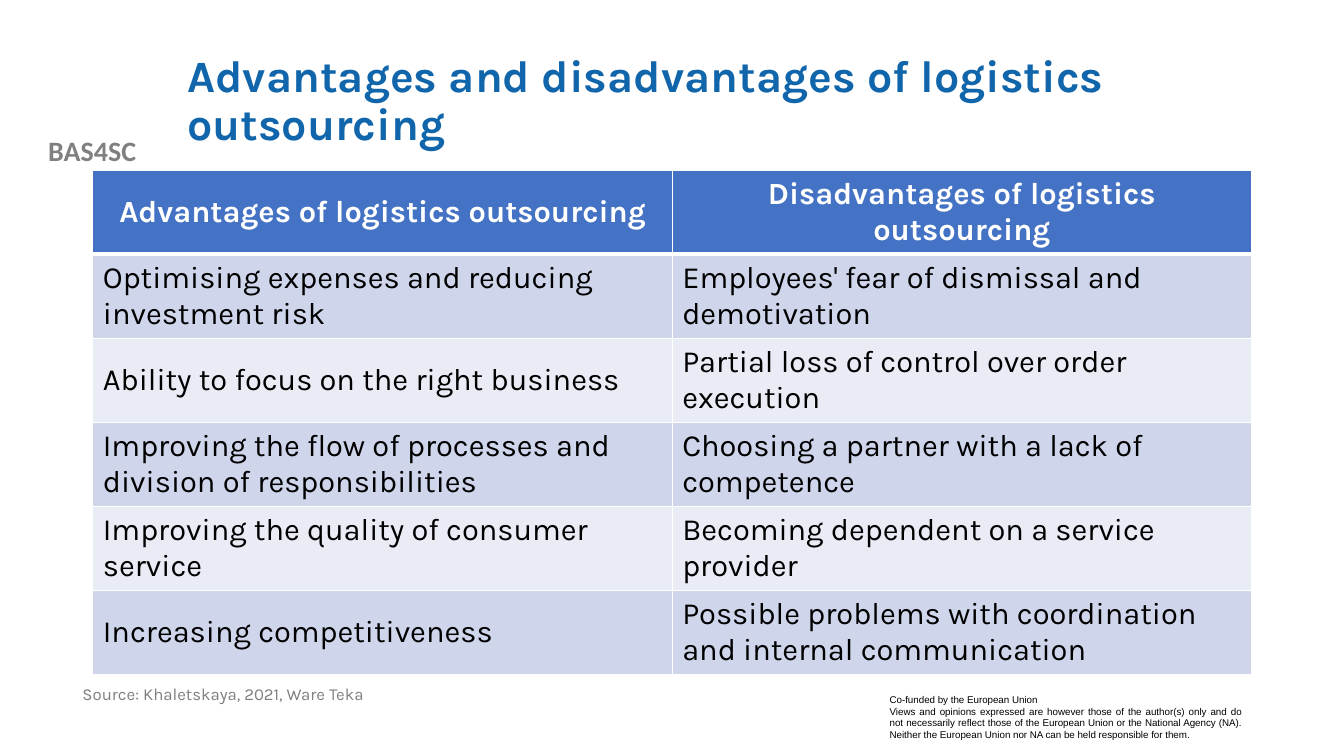
from dataclasses import dataclass

from lxml import etree
from pptx import Presentation
from pptx.dml.color import RGBColor
from pptx.enum import shapes, text
from pptx.oxml import ns
from pptx.util import Cm, Pt

TITLE = "Advantages and disadvantages of logistics outsourcing"
PROGRAMME = "BAS4SC"
SOURCE = "Source: Khaletskaya, 2021, Ware Teka"
FUNDING = (
    "Co-funded by the European Union",
    "Views and opinions expressed are however those of the author(s) only and do not "
    "necessarily reflect those of the European Union or the National Agency (NA). "
    "Neither the European Union nor NA can be held responsible for them.",
)
COMPARISON = (
    ("Advantages of logistics outsourcing", "Disadvantages of logistics outsourcing"),
    ("Optimising expenses and reducing investment risk",
     "Employees' fear of dismissal and demotivation"),
    ("Ability to focus on the right business",
     "Partial loss of control over order execution"),
    ("Improving the flow of processes and division of responsibilities",
     "Choosing a partner with a lack of competence"),
    ("Improving the quality of consumer service",
     "Becoming dependent on a service provider"),
    ("Increasing competitiveness",
     "Possible problems with coordination and internal communication"),
)


@dataclass(frozen=True)
class Theme:
    body: str = "Karla"
    label: str = "Calibri"
    legal: str = "Arial"
    blue: str = "1065AB"
    header: str = "4472C4"
    bands: tuple = ("CFD5EA", "E9EBF5")
    grey: str = "808080"
    source_grey: str = "7F7F7F"
    black: str = "000000"
    white: str = "FFFFFF"
    title_size: int = 32
    table_size: int = 22
    label_size: int = 20
    source_size: int = 12
    legal_size: int = 7


THEME = Theme()


def style(frame, font, size, colour, bold=False, align=text.PP_ALIGN.LEFT, spacing=None):
    for para in frame.paragraphs:
        para.alignment = align
        para.line_spacing = spacing
        for span in para.runs:
            span.font.name = font
            span.font.size = Pt(size)
            span.font.bold = bold
            span.font.color.rgb = RGBColor.from_string(colour)


def add_text(page, content, place, *look, anchor=text.MSO_ANCHOR.TOP, **layout):
    box = page.shapes.add_textbox(*map(Cm, place))
    box.text_frame.word_wrap = True
    box.text_frame.vertical_anchor = anchor
    box.text_frame.text = content
    style(box.text_frame, *look, **layout)


def add_funding(page):
    box = page.shapes.add_shape(
        shapes.MSO_SHAPE.RECTANGLE, Cm(22.17), Cm(17.35), Cm(9.37), Cm(1.45))
    box.shadow.inherit = False
    box.fill.solid()
    box.fill.fore_color.rgb = RGBColor.from_string(THEME.white)
    box.line.fill.background()
    box.text_frame.word_wrap = True
    box.text_frame.vertical_anchor = text.MSO_ANCHOR.TOP
    box.text_frame.text = "\n".join(FUNDING)
    style(box.text_frame, THEME.legal, THEME.legal_size, THEME.black,
          align=text.PP_ALIGN.JUSTIFY)


def add_borders(cell, bottom):
    properties = cell._tc.get_or_add_tcPr()
    widths = {"lnL": 1, "lnR": 1, "lnT": 1, "lnB": bottom}
    for index, (side, width) in enumerate(widths.items()):
        line = etree.Element(ns.qn(f"a:{side}"), w=str(Pt(width)))
        fill = etree.SubElement(line, ns.qn("a:solidFill"))
        etree.SubElement(fill, ns.qn("a:srgbClr"), val=THEME.white)
        properties.insert(index, line)


def add_comparison(page):
    row_height, column_width = Cm(2.06), Cm(14.6)
    rows, columns = len(COMPARISON), len(COMPARISON[0])
    table = page.shapes.add_table(
        rows, columns, Cm(2.34), Cm(4.29),
        column_width * columns, row_height * rows).table
    for row, entries in enumerate(COMPARISON):
        heading = row == 0
        colour = THEME.header if heading else THEME.bands[(row - 1) % 2]
        for column, entry in enumerate(entries):
            cell = table.cell(row, column)
            cell.text_frame.text = entry
            cell.vertical_anchor = text.MSO_ANCHOR.MIDDLE
            cell.fill.solid()
            cell.fill.fore_color.rgb = RGBColor.from_string(colour)
            add_borders(cell, 3 if heading else 1)
            style(cell.text_frame, THEME.body, THEME.table_size,
                  THEME.white if heading else THEME.black, heading,
                  text.PP_ALIGN.CENTER if heading else text.PP_ALIGN.LEFT)


def main():
    deck = Presentation()
    deck.slide_width, deck.slide_height = Cm(33.87), Cm(19.05)
    page = deck.slides.add_slide(deck.slide_layouts[6])
    add_text(page, PROGRAMME, (0, 3.25, 4.65, 1.11),
             THEME.label, THEME.label_size, THEME.grey, True,
             align=text.PP_ALIGN.CENTER)
    add_funding(page)
    add_text(page, TITLE, (4.47, 1.02, 27.08, 3.1),
             THEME.body, THEME.title_size, THEME.blue, True,
             anchor=text.MSO_ANCHOR.MIDDLE, spacing=0.9)
    add_text(page, SOURCE, (1.83, 17.17, 12.73, 1.32),
             THEME.body, THEME.source_size, THEME.source_grey, spacing=0.9)
    add_comparison(page)
    deck.save("out.pptx")


if __name__ == "__main__":
    main()
